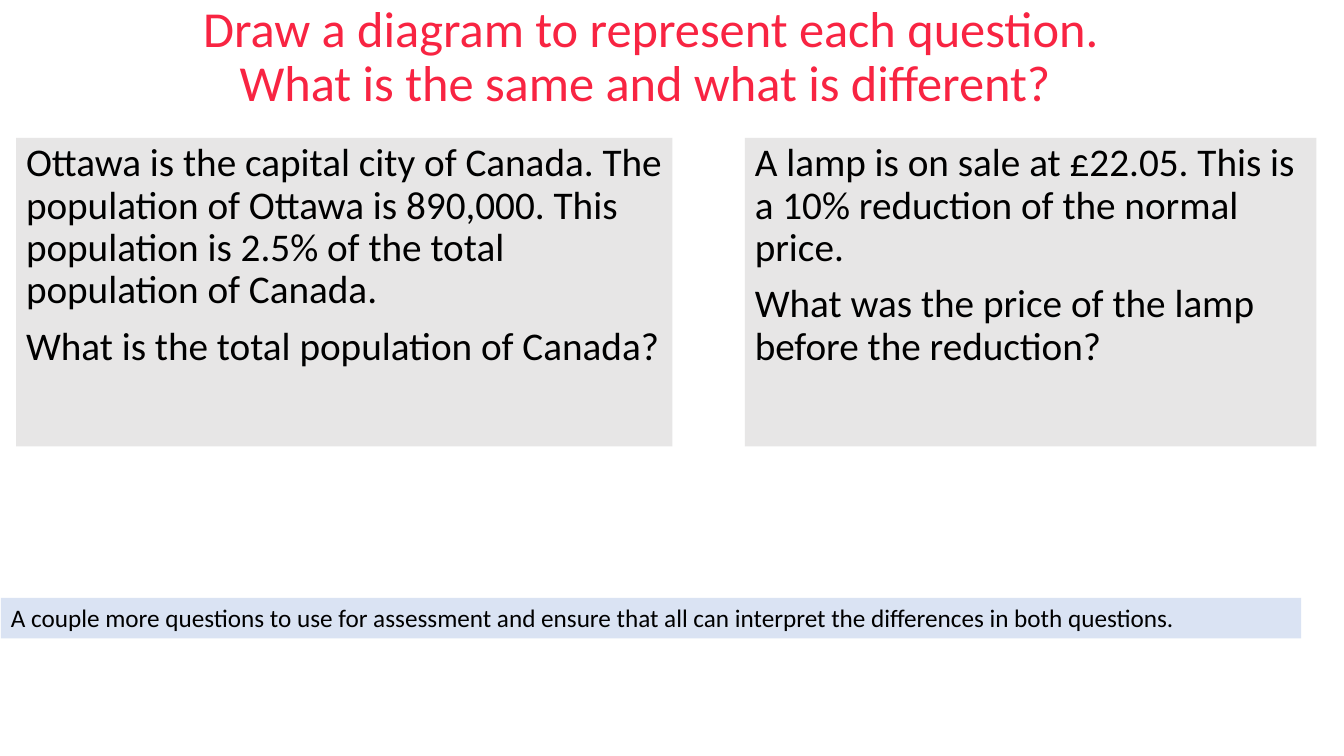
from pptx import Presentation
from pptx.dml.color import RGBColor
from pptx.enum.text import MSO_ANCHOR as Anchor, PP_ALIGN as Align
from pptx.util import Pt

# Content
TITLE = ["Draw a diagram to represent each question.\vWhat is the same and what is different? "]
QUESTIONS = [
    # left, width, paragraphs
    (11.5, 468.7, [
        "Ottawa is the capital city of Canada. The population of Ottawa is 890,000. "
        "This population is 2.5% of the total population of Canada.",
        "What is the total population of Canada?",
    ]),
    (532.1, 408.2, [
        "A lamp is on sale at £22.05. This is a 10% reduction of the normal price.",
        "What was the price of the lamp before the reduction?",
    ]),
]
TEACHER_NOTE = ["A couple more questions to use for assessment and ensure that all can "
                "interpret the differences in both questions."]

# Style
FONT = "Calibri"
RED = RGBColor(0xF8, 0x24, 0x42)
BLACK = RGBColor(0, 0, 0)
GREY = RGBColor(0xE7, 0xE6, 0xE6)
PALE_BLUE = RGBColor(0xDA, 0xE3, 0xF3)
QUESTION_TOP, QUESTION_HEIGHT = 98.6, 220.3


def add_text(slide, paragraphs, left, top, width, height, *, size, color=BLACK,
             fill=None, align=Align.LEFT, anchor=Anchor.TOP, spacing=1.0, before=0):
    box = slide.shapes.add_textbox(Pt(left), Pt(top), Pt(width), Pt(height))
    if fill is not None:
        box.fill.solid()
        box.fill.fore_color.rgb = fill
    frame = box.text_frame
    frame.word_wrap = True
    frame.vertical_anchor = anchor
    frame.text = "\n".join(paragraphs)
    for paragraph in frame.paragraphs:
        paragraph.alignment = align
        paragraph.line_spacing = spacing
        paragraph.space_before = Pt(before)
        for run in paragraph.runs:
            run.font.name = FONT
            run.font.size = Pt(size)
            run.font.color.rgb = color


def main():
    deck = Presentation()
    deck.slide_width, deck.slide_height = Pt(960), Pt(540)
    slide = deck.slides.add_slide(deck.slide_layouts[6])

    # Title
    add_text(slide, TITLE, 51, 0, 828, 83, size=36, color=RED,
             align=Align.CENTER, anchor=Anchor.MIDDLE, spacing=0.9)

    # Two questions side by side
    for left, width, question in QUESTIONS:
        add_text(slide, question, left, QUESTION_TOP, width, QUESTION_HEIGHT,
                 size=28, fill=GREY, spacing=0.9, before=10)

    # Note for the teacher
    add_text(slide, TEACHER_NOTE, 0.7, 427, 928.8, 29, size=18, fill=PALE_BLUE)

    deck.save("out.pptx")


if __name__ == "__main__":
    main()
